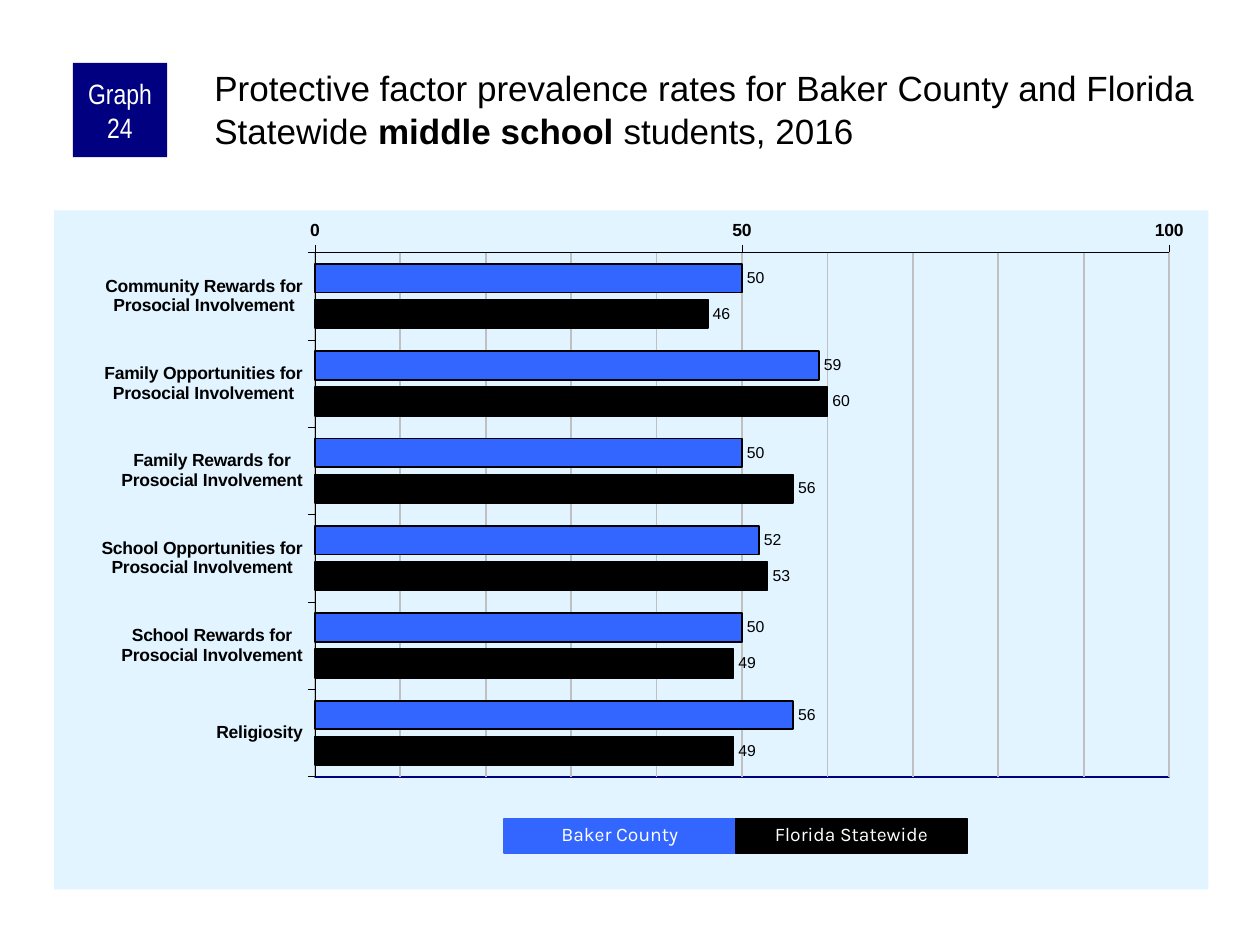
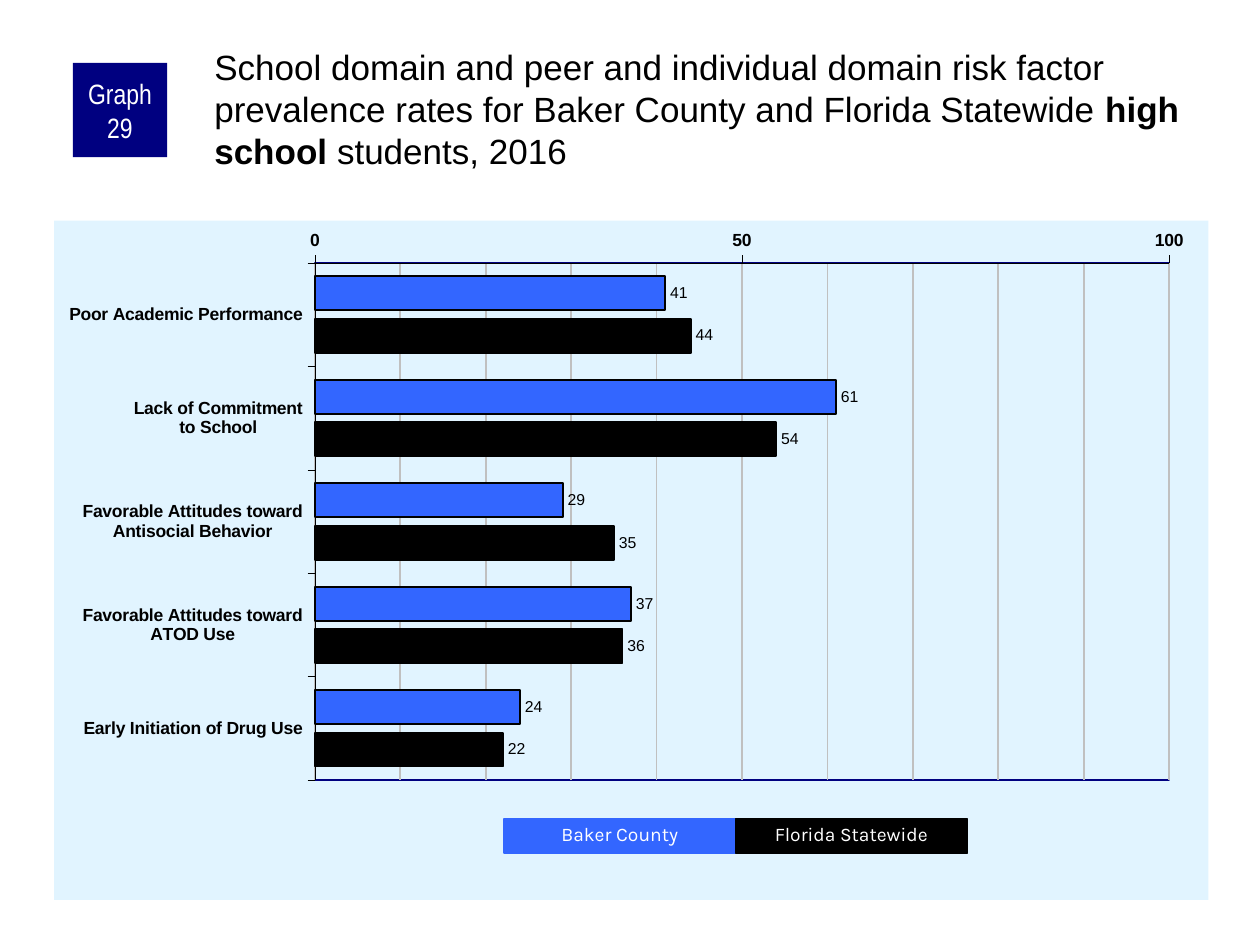
from copy import deepcopy

from lxml.etree import SubElement
from pptx import Presentation
from pptx.chart.data import CategoryChartData
from pptx.dml.color import RGBColor
from pptx.enum.chart import XL_AXIS_CROSSES as Crosses
from pptx.enum.chart import XL_CHART_TYPE as ChartType
from pptx.enum.chart import XL_LABEL_POSITION as LabelPosition
from pptx.enum.chart import XL_TICK_MARK as TickMark
from pptx.enum.shapes import MSO_SHAPE as Preset
from pptx.enum.text import MSO_ANCHOR as Anchor
from pptx.enum.text import MSO_AUTO_SIZE as AutoSize
from pptx.enum.text import PP_ALIGN as Align
from pptx.oxml import parse_xml
from pptx.oxml.ns import nsdecls, qn
from pptx.util import Cm, Pt

NAVY = RGBColor(0x00, 0x00, 0x80)
BLUE = RGBColor(0x33, 0x66, 0xFF)
BLACK = RGBColor(0x00, 0x00, 0x00)
WHITE = RGBColor(0xFF, 0xFF, 0xFF)
PALE_BLUE = RGBColor(0xE1, 0xF4, 0xFF)
GRID_GREY = RGBColor(0xC0, 0xC0, 0xC0)

GROUPS = (("Baker County", BLUE), ("Florida Statewide", BLACK))
TITLE_ONLY = 5

GRAPHS = (
    {
        "number": 24,
        "title_top": 1.27,
        "title": (
            ("Protective factor prevalence rates for Baker County and Florida Statewide ", False),
            ("middle school ", True),
            ("students, 2016", False),
        ),
        "chart_top": 4.24,
        "plot_height": 0.772,
        "rates": (
            ("Community Rewards for\nProsocial Involvement", 50, 46),
            ("Family Opportunities for\nProsocial Involvement", 59, 60),
            ("Family Rewards for\nProsocial Involvement", 50, 56),
            ("School Opportunities for\nProsocial Involvement", 52, 53),
            ("School Rewards for\nProsocial Involvement", 50, 49),
            ("Religiosity", 56, 49),
        ),
    },
    {
        "number": 29,
        "title_top": 0.84,
        "title": (
            ("School domain and peer and individual domain risk factor prevalence rates "
             "for Baker County and Florida Statewide ", False),
            ("high school", True),
            (" students, 2016", False),
        ),
        "chart_top": 4.45,
        "plot_height": 0.762,
        "rates": (
            ("Poor Academic Performance", 41, 44),
            ("Lack of Commitment\nto School", 61, 54),
            ("Favorable Attitudes toward\nAntisocial Behavior", 29, 35),
            ("Favorable Attitudes toward\nATOD Use", 37, 36),
            ("Early Initiation of Drug Use", 24, 22),
        ),
    },
)


def format_font(font, size, color=BLACK, name="Arial", bold=False):
    font.size = Pt(size)
    font.name = name
    font.bold = bold
    font.color.rgb = color


def format_line(line, color, width):
    line.color.rgb = color
    line.width = Pt(width)


def write_text(frame, pieces, align=Align.LEFT, anchor=Anchor.TOP, insets=None,
               spacing=None, auto_size=AutoSize.NONE, **font_format):
    frame.word_wrap = True
    frame.auto_size = auto_size
    frame.vertical_anchor = anchor
    if insets:
        (frame.margin_left, frame.margin_top,
         frame.margin_right, frame.margin_bottom) = map(Cm, insets)
    paragraph = frame.paragraphs[0]
    paragraph.alignment = align
    if spacing:
        paragraph.line_spacing = spacing
    for text, bold in pieces:
        run = paragraph.add_run()
        run.text = text
        format_font(run.font, bold=bold, **font_format)


def set_plot_layout(chart, **edges):
    plot_area = chart.element.find(".//" + qn("c:plotArea"))
    for layout in plot_area.findall(qn("c:layout")):
        plot_area.remove(layout)
    layout = parse_xml(f"<c:layout {nsdecls('c')}/>")
    plot_area.insert(0, layout)
    manual = SubElement(layout, qn("c:manualLayout"))
    settings = {"layoutTarget": "inner", "xMode": "edge", "yMode": "edge", **edges}
    for tag, value in settings.items():
        SubElement(manual, qn("c:" + tag)).set("val", str(value))
    plot_area.append(parse_xml(
        f"<c:spPr {nsdecls('c', 'a')}><a:noFill/><a:ln w=\"{Pt(1)}\">"
        f"<a:solidFill><a:srgbClr val=\"{NAVY}\"/></a:solidFill></a:ln></c:spPr>"))


def set_chart_background(chart, color):
    chart.element.find(qn("c:chart")).addnext(parse_xml(
        f"<c:spPr {nsdecls('c', 'a')}><a:solidFill><a:srgbClr val=\"{color}\"/>"
        "</a:solidFill><a:ln><a:noFill/></a:ln></c:spPr>"))


def add_gridlines(chart, major_unit, minor_unit):
    axis = chart.value_axis
    axis.major_unit = major_unit
    axis.minor_unit = minor_unit
    axis.has_major_gridlines = True
    axis.has_minor_gridlines = True
    format_line(axis.major_gridlines.format.line, GRID_GREY, 1)
    major = chart.element.find(".//" + qn("c:majorGridlines"))
    minor = chart.element.find(".//" + qn("c:minorGridlines"))
    minor.append(deepcopy(major.find(qn("c:spPr"))))


class GraphDeck:
    def __init__(self):
        self.presentation = Presentation()
        self.presentation.slide_width = Cm(25.4)
        self.presentation.slide_height = Cm(19.05)
        self.slide = None

    def new_slide(self):
        layout = self.presentation.slide_layouts[TITLE_ONLY]
        self.slide = self.presentation.slides.add_slide(layout)

    def title(self, pieces, top):
        title = self.slide.shapes.title
        title.left, title.top = Cm(4.24), Cm(top)
        title.width, title.height = Cm(20.12), Cm(2.11)
        write_text(title.text_frame, pieces, insets=(0.08, 0.08, 0, 0), size=20)

    def box(self, text, left, top, width, height, fill, outline=None, **text_format):
        shape = self.slide.shapes.add_shape(
            Preset.RECTANGLE, Cm(left), Cm(top), Cm(width), Cm(height))
        shape.shadow.inherit = False
        shape.fill.solid()
        shape.fill.fore_color.rgb = fill
        if outline is None:
            shape.line.fill.background()
        else:
            format_line(shape.line, outline, 0.75)
        write_text(shape.text_frame, [(text, False)], align=Align.CENTER,
                   color=WHITE, **text_format)

    def badge(self, number):
        self.box(f"Graph {number}", 1.47, 1.27, 1.9, 1.9, NAVY, anchor=Anchor.MIDDLE,
                 insets=(0.13, 0, 0.13, 0), size=16, name="Arial Narrow")

    def legend(self):
        width = 4.67
        for index, (group, color) in enumerate(GROUPS):
            self.box(group, 10.16 + index * width, 16.51, width, 0.69, color,
                     outline=color, spacing=0.9, auto_size=AutoSize.SHAPE_TO_FIT_TEXT,
                     size=11, name="Karla")

    def bar_chart(self, rates, top, plot_height):
        categories, *columns = zip(*rates)
        data = CategoryChartData()
        data.categories = categories
        for index, values in enumerate(columns, 1):
            data.add_series(f"Series {index}", values)
        chart = self.slide.shapes.add_chart(
            ChartType.BAR_CLUSTERED, Cm(1.09), Cm(top), Cm(23.27), Cm(13.69), data).chart
        chart.has_title = False
        chart.has_legend = False
        format_font(chart.font, 11.8)
        set_chart_background(chart, PALE_BLUE)
        set_plot_layout(chart, x=0.226, y=0.062, w=0.74, h=plot_height)
        self.axes(chart)
        self.bars(chart.plots[0])

    def axes(self, chart):
        category_axis, value_axis = chart.category_axis, chart.value_axis
        for axis in (category_axis, value_axis):
            axis.major_tick_mark = TickMark.OUTSIDE
            axis.minor_tick_mark = TickMark.NONE
            format_font(axis.tick_labels.font, 10, bold=True)
            format_line(axis.format.line, BLACK, 0.25)
        category_axis.reverse_order = True
        category_axis.crosses = Crosses.MAXIMUM
        value_axis.minimum_scale = 0
        value_axis.maximum_scale = 100
        add_gridlines(chart, 50, 10)

    def bars(self, plot):
        plot.vary_by_categories = False
        plot.gap_width = 80
        plot.overlap = -25
        for series, (_, color) in zip(plot.series, GROUPS):
            series.invert_if_negative = False
            series.format.fill.solid()
            series.format.fill.fore_color.rgb = color
            format_line(series.format.line, BLACK, 1)
            labels = series.data_labels
            labels.show_value = True
            labels.position = LabelPosition.OUTSIDE_END
            format_font(labels.font, 9)


def main():
    deck = GraphDeck()
    for graph in GRAPHS:
        deck.new_slide()
        deck.bar_chart(graph["rates"], graph["chart_top"], graph["plot_height"])
        deck.badge(graph["number"])
        deck.title(graph["title"], graph["title_top"])
        deck.legend()
    deck.presentation.save("out.pptx")


if __name__ == "__main__":
    main()
